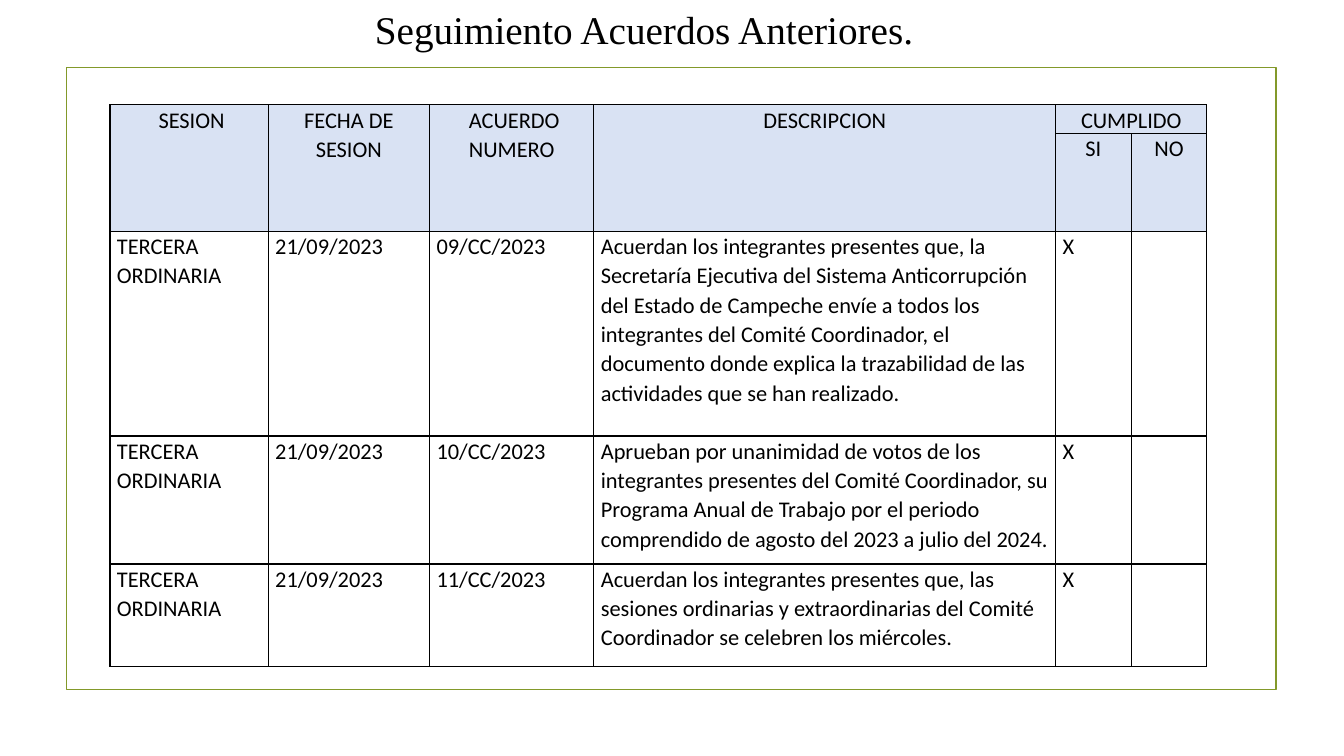
from dataclasses import dataclass

from lxml import etree
from pptx import Presentation
from pptx.dml.color import RGBColor
from pptx.enum import shapes, text
from pptx.oxml import ns
from pptx.util import Inches, Pt


@dataclass(frozen=True)
class Theme:
    """Colours, fonts and type sizes."""
    ink: str = "000000"
    frame: str = "83992A"
    header: str = "D9E2F3"
    title_font: str = "Times New Roman"
    body_font: str = "Calibri"
    title_size: int = 28
    body_size: int = 16


@dataclass(frozen=True)
class Agreement:
    """One agreement followed up in the table."""
    number: str
    description: str
    session: str = "TERCERA ORDINARIA"
    date: str = "21/09/2023"
    done: str = "X"
    pending: str = ""

    def values(self) -> list[str]:
        """Return the cell texts in column order."""
        return [self.session, self.date, self.number,
                self.description, self.done, self.pending]


THEME = Theme()
HEADER = [
    [" SESION", "FECHA DE SESION", " ACUERDO NUMERO", "DESCRIPCION", "CUMPLIDO", ""],
    ["", "", "", "", "SI", "NO"],
]
AGREEMENTS = [
    Agreement("09/CC/2023",
              "Acuerdan los integrantes presentes que, la Secretaría Ejecutiva del "
              "Sistema Anticorrupción del Estado de Campeche envíe a todos los "
              "integrantes del Comité Coordinador, el documento donde explica la "
              "trazabilidad de las actividades que se han realizado."),
    Agreement("10/CC/2023",
              "Aprueban por unanimidad de votos de los integrantes presentes del "
              "Comité Coordinador, su Programa Anual de Trabajo por el periodo "
              "comprendido de agosto del 2023 a julio del 2024."),
    Agreement("11/CC/2023",
              "Acuerdan los integrantes presentes que, las sesiones ordinarias y "
              "extraordinarias del Comité Coordinador se celebren los miércoles."),
]
COL_WIDTHS = [1.57, 1.6, 1.63, 4.58, 0.75, 0.75]
ROW_HEIGHTS = [0.28, 0.97, 2.03, 1.27, 1.02]


def write(tf, content: str, *, font: str, size: int, align=text.PP_ALIGN.LEFT,
          line_spacing: float = 1.0, after: int = 0) -> None:
    """Write one formatted paragraph into a text frame."""
    tf.word_wrap = True
    p = tf.paragraphs[0]
    p.alignment, p.line_spacing, p.space_after = align, line_spacing, Pt(after)
    if not content:
        return
    r = p.add_run()
    r.text = content
    r.font.name, r.font.size = font, Pt(size)
    r.font.color.rgb = RGBColor.from_string(THEME.ink)


def add_borders(cell, width: float = 1) -> None:
    """Draw a solid line on the four sides of a cell."""
    tc_pr = cell._tc.get_or_add_tcPr()
    for side in ("a:lnL", "a:lnR", "a:lnT", "a:lnB"):
        ln = etree.SubElement(tc_pr, ns.qn(side), w=str(Pt(width)))
        fill = etree.SubElement(ln, ns.qn("a:solidFill"))
        etree.SubElement(fill, ns.qn("a:srgbClr"), val=THEME.ink)


def format_cell(cell, content: str, *, header: bool) -> None:
    """Fill in one table cell."""
    cell.margin_left = cell.margin_right = Inches(0.07)
    cell.margin_top = cell.margin_bottom = 0
    add_borders(cell)
    if header:
        cell.fill.solid()
        cell.fill.fore_color.rgb = RGBColor.from_string(THEME.header)
    else:
        cell.fill.background()
    align = text.PP_ALIGN.CENTER if header else text.PP_ALIGN.LEFT
    write(cell.text_frame, content, font=THEME.body_font, size=THEME.body_size,
          align=align, line_spacing=1.07, after=8)


def add_frame(slide) -> None:
    """Draw the outline around the table."""
    sp = slide.shapes.add_shape(shapes.MSO_SHAPE.RECTANGLE, Inches(0.66),
                                Inches(0.67), Inches(12), Inches(6.17))
    sp.shadow.inherit = False
    sp.fill.background()
    sp.line.color.rgb = RGBColor.from_string(THEME.frame)
    sp.line.width = Pt(1.25)


def add_title(slide) -> None:
    """Place the slide heading."""
    sp = slide.shapes.add_textbox(Inches(3.62), 0, Inches(6.69), Inches(0.57))
    write(sp.text_frame, "Seguimiento Acuerdos Anteriores.",
          font=THEME.title_font, size=THEME.title_size)


def add_agreements(slide) -> None:
    """Build the follow-up table with its two-row header."""
    rows = HEADER + [a.values() for a in AGREEMENTS]
    table = slide.shapes.add_table(
        len(rows), len(COL_WIDTHS), Inches(1.09), Inches(1.04),
        Inches(sum(COL_WIDTHS)), Inches(sum(ROW_HEIGHTS))).table
    table.first_row = table.horz_banding = False
    for column, width in zip(table.columns, COL_WIDTHS):
        column.width = Inches(width)
    for row, height in zip(table.rows, ROW_HEIGHTS):
        row.height = Inches(height)
    for i, values in enumerate(rows):
        for j, value in enumerate(values):
            format_cell(table.cell(i, j), value, header=i < len(HEADER))
    for j in range(4):
        table.cell(0, j).merge(table.cell(1, j))
    table.cell(0, 4).merge(table.cell(0, 5))


def main() -> None:
    """Build and save the slide."""
    prs = Presentation()
    prs.slide_width, prs.slide_height = Inches(13.33), Inches(7.5)
    slide = prs.slides.add_slide(prs.slide_layouts[6])
    add_frame(slide)
    add_title(slide)
    add_agreements(slide)
    prs.save("out.pptx")


if __name__ == "__main__":
    main()
